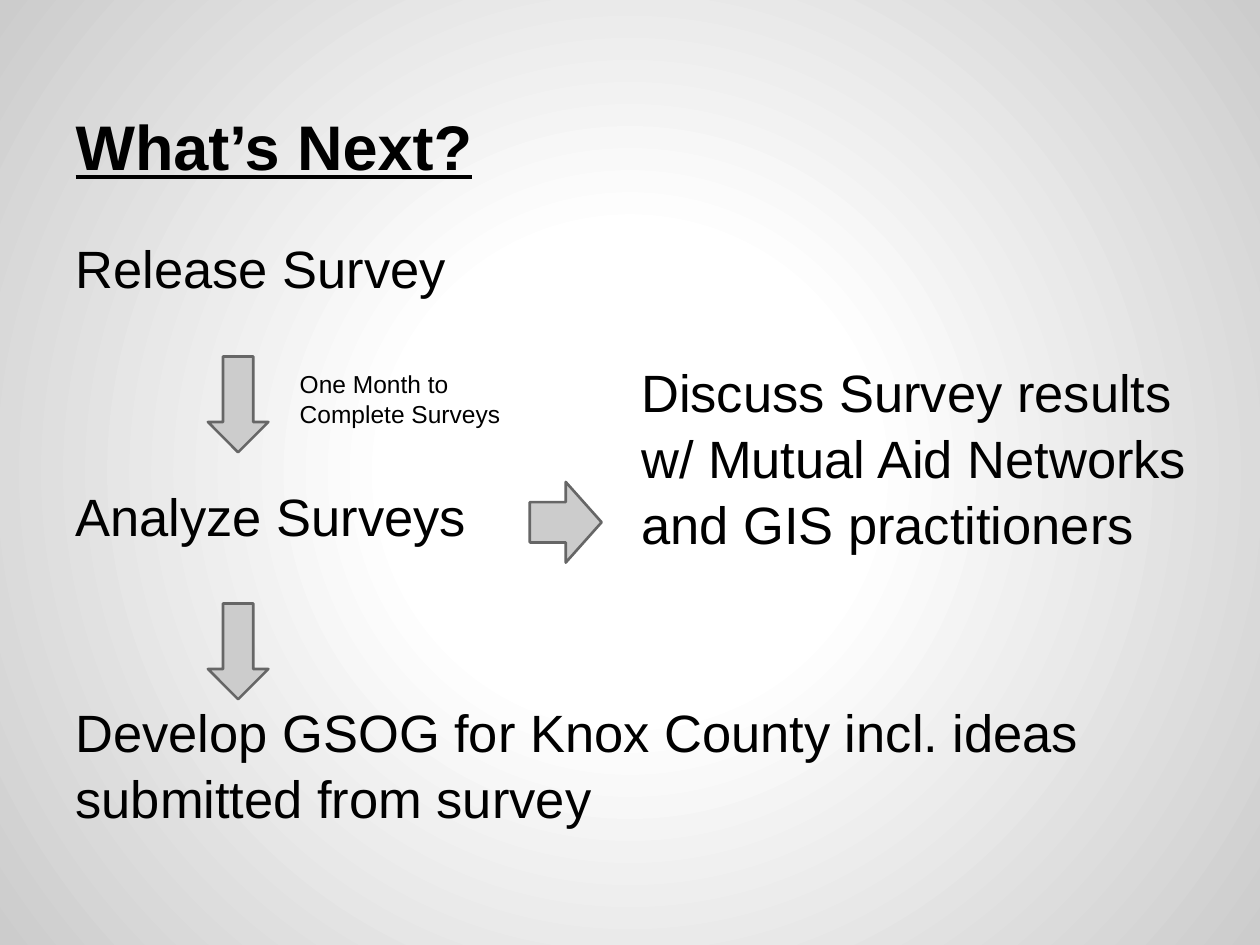
from dataclasses import dataclass

from pptx import Presentation
from pptx.dml.color import RGBColor
from pptx.enum.shapes import MSO_SHAPE
from pptx.enum.text import MSO_ANCHOR, MSO_AUTO_SIZE, PP_ALIGN
from pptx.oxml import parse_xml
from pptx.oxml.ns import nsdecls, qn
from pptx.util import Inches, Pt

BLACK = RGBColor(0x00, 0x00, 0x00)
WHITE = RGBColor(0xFF, 0xFF, 0xFF)
SILVER = RGBColor(0xCC, 0xCC, 0xCC)
GRAY = RGBColor(0x66, 0x66, 0x66)
FONT = "Arial"
MARGIN = 0.5      # left column of the steps, inches
ARROW_X = 1.65    # column of the down arrows
NOTE_Y = 2.83     # row of the first arrow and its note
STEP_H = 1.11


@dataclass
class Label:
    lines: list[str]
    x: float
    y: float
    w: float
    h: float = STEP_H
    size: int = 30
    spacing: float = 1.05
    before: float = 3


@dataclass
class Arrow:
    x: float
    y: float
    w: float = 0.48
    h: float = 0.76
    rotation: int = 0


LABELS = [
    Label(["Release Survey"], MARGIN, 1.75, 3.25),
    Label(["One Month to", "Complete Surveys"], 2.28, NOTE_Y, 1.99, 0.76,
          size=14, spacing=1, before=0),
    Label(["Analyze Surveys"], MARGIN, 3.72, 3.57),
    Label(["Develop GSOG for Knox County incl. ideas submitted from survey"],
          MARGIN, 5.43, 8.92),
    Label(["Discuss Survey results w/ Mutual Aid Networks and GIS practitioners"],
          4.99, 2.73, 4.8, 2.83),
]
ARROWS = [
    Arrow(ARROW_X, NOTE_Y),
    Arrow(ARROW_X, 4.79),
    Arrow(4.17, 3.86, 0.64, 0.57, rotation=270),
]


def set_background(s) -> None:
    """Fill the slide with a radial gradient, white in the middle."""
    s.background.fill.gradient()
    stops = "".join(
        f'<a:gs pos="{pos * 1000}"><a:srgbClr val="{color}"/></a:gs>'
        for pos, color in [(0, WHITE), (30, WHITE), (100, SILVER)])
    grad = next(s.element.iter(qn("a:gradFill")))
    grad.getparent().replace(grad, parse_xml(
        f'<a:gradFill {nsdecls("a")}><a:gsLst>{stops}</a:gsLst>'
        '<a:path path="circle"><a:fillToRect l="50000" t="50000" '
        'r="50000" b="50000"/></a:path></a:gradFill>'))


def format_frame(tf, anchor: MSO_ANCHOR) -> None:
    tf.word_wrap = True
    tf.auto_size = MSO_AUTO_SIZE.NONE
    tf.vertical_anchor = anchor
    tf.margin_left = tf.margin_right = Inches(0.1)
    tf.margin_top = tf.margin_bottom = Inches(0.1)


def add_run(p, text: str, size: int, heading: bool = False) -> None:
    p.alignment = PP_ALIGN.LEFT
    r = p.add_run()
    r.text = text
    r.font.name = FONT
    r.font.size = Pt(size)
    r.font.color.rgb = BLACK
    r.font.bold = r.font.underline = heading


def add_title(s, text: str) -> None:
    title = s.shapes.title
    title.left, title.top = Inches(MARGIN), Inches(0.3)
    title.width, title.height = Inches(9), Inches(1.25)
    format_frame(title.text_frame, MSO_ANCHOR.BOTTOM)
    add_run(title.text_frame.paragraphs[0], text, 36, heading=True)


def add_label(s, label: Label) -> None:
    box = s.shapes.add_textbox(Inches(label.x), Inches(label.y),
                               Inches(label.w), Inches(label.h))
    tf = box.text_frame
    format_frame(tf, MSO_ANCHOR.TOP)
    for i, line in enumerate(label.lines):
        p = tf.add_paragraph() if i else tf.paragraphs[0]
        p.line_spacing = label.spacing
        p.space_before = Pt(label.before)
        add_run(p, line, label.size)


def add_arrow(s, arrow: Arrow) -> None:
    sp = s.shapes.add_shape(MSO_SHAPE.DOWN_ARROW, Inches(arrow.x), Inches(arrow.y),
                            Inches(arrow.w), Inches(arrow.h))
    sp.rotation = arrow.rotation
    sp.shadow.inherit = False
    sp.fill.solid()
    sp.fill.fore_color.rgb = SILVER
    sp.line.color.rgb = GRAY
    sp.line.width = Pt(1.5)


def main() -> None:
    prs = Presentation()
    prs.slide_width, prs.slide_height = Inches(10), Inches(7.5)
    s = prs.slides.add_slide(prs.slide_layouts.get_by_name("Title Only"))
    set_background(s)
    add_title(s, "What’s Next?")
    # Steps, their note and the arrows between them
    for arrow in ARROWS:
        add_arrow(s, arrow)
    for label in LABELS:
        add_label(s, label)
    prs.save("out.pptx")


if __name__ == "__main__":
    main()
